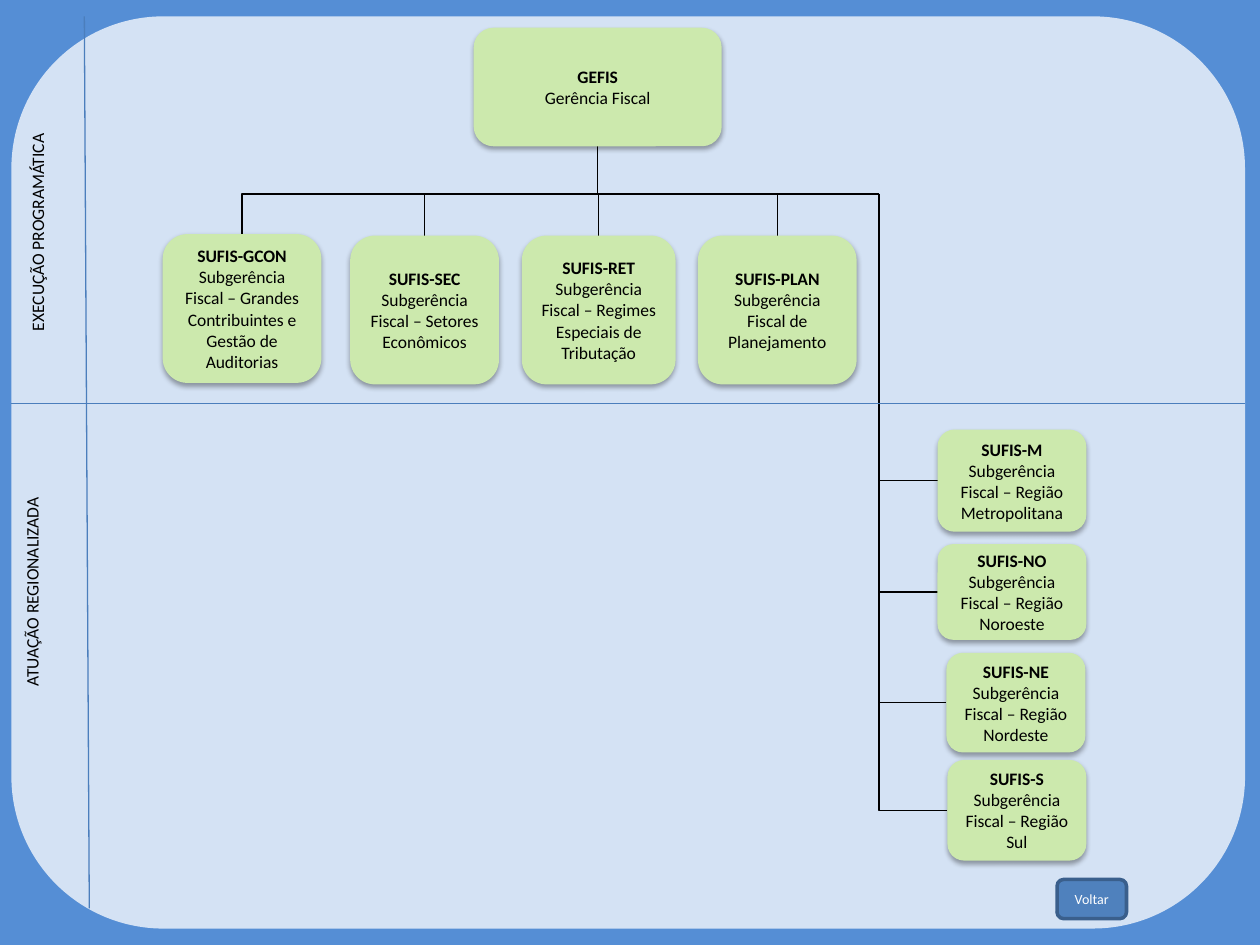
from dataclasses import dataclass

from lxml.etree import SubElement
from pptx import Presentation
from pptx.dml.color import RGBColor
from pptx.enum.shapes import MSO_CONNECTOR as Connector, MSO_SHAPE as Preset
from pptx.enum.text import MSO_ANCHOR as Anchor, MSO_AUTO_SIZE as AutoSize, PP_ALIGN as Align
from pptx.oxml.ns import qn
from pptx.util import Cm, Pt

FONT = "Calibri"
BLACK = "000000"
LANE_LINE = "4B7EBC"
BUS_Y = 3.91
TRUNK_X = 17.72


@dataclass(frozen=True)
class Box:
    left: float
    top: float
    width: float
    height: float

    @property
    def center_x(self) -> float:
        return self.left + self.width / 2

    @property
    def center_y(self) -> float:
        return self.top + self.height / 2

    @property
    def lengths(self) -> tuple:
        return Cm(self.left), Cm(self.top), Cm(self.width), Cm(self.height)


@dataclass(frozen=True)
class Unit:
    code: str
    name: str
    box: Box


@dataclass(frozen=True)
class Lane:
    title: str
    box: Box


HEAD = Unit("GEFIS", "Gerência Fiscal", Box(9.55, 0.56, 5, 2.39))
GCON = Unit(
    "SUFIS-GCON",
    "Subgerência Fiscal – Grandes Contribuintes e Gestão de Auditorias",
    Box(3.28, 4.72, 3.2, 3),
)
PROGRAMS = [
    Unit("SUFIS-SEC", "Subgerência Fiscal – Setores Econômicos", Box(7.06, 4.75, 3, 3)),
    Unit("SUFIS-RET", "Subgerência Fiscal – Regimes Especiais de Tributação",
         Box(10.52, 4.75, 3.1, 3)),
    Unit("SUFIS-PLAN", "Subgerência Fiscal de Planejamento", Box(14.07, 4.75, 3.2, 3)),
]
REGIONS = [
    Unit("SUFIS-M", "Subgerência Fiscal – Região Metropolitana", Box(18.9, 8.66, 3, 2.06)),
    Unit("SUFIS-NO", "Subgerência Fiscal – Região Noroeste", Box(18.9, 10.97, 3, 1.93)),
    Unit("SUFIS-NE", "Subgerência Fiscal – Região Nordeste", Box(19.08, 13.16, 2.8, 2.01)),
    Unit("SUFIS-S", "Subgerência Fiscal – Região Sul", Box(19.1, 15.32, 2.8, 2.03)),
]
LANES = [
    Lane("EXECUÇÃO PROGRAMÁTICA", Box(0.41, 2.41, 0.94, 4.55)),
    Lane("ATUAÇÃO REGIONALIZADA", Box(0.3, 6.55, 0.94, 10.77)),
]


def paint(color_format, color: str) -> None:
    color_format.rgb = RGBColor.from_string(color)


def fill_solid(fill, color: str) -> None:
    fill.solid()
    paint(fill.fore_color, color)


def add_run(paragraph, text: str, size: float = 10, color: str = BLACK, bold: bool = False) -> None:
    paragraph.alignment = Align.CENTER
    run = paragraph.add_run()
    run.text = text
    run.font.name = FONT
    run.font.size = Pt(size)
    run.font.bold = bold
    paint(run.font.color, color)


def add_rounded(slide, box: Box, color: str):
    shape = slide.shapes.add_shape(Preset.ROUNDED_RECTANGLE, *box.lengths)
    shape.shadow.inherit = False
    fill_solid(shape.fill, color)
    shape.line.fill.background()
    shape.text_frame.word_wrap = True
    shape.text_frame.vertical_anchor = Anchor.MIDDLE
    return shape


def add_shadow(shape) -> None:
    effects = shape._element.spPr.find(qn("a:effectLst"))
    shadow = SubElement(effects, qn("a:outerShdw"), blurRad=str(Pt(3.1)), dist=str(Pt(1.8)),
                        dir="5400000", rotWithShape="0")
    color = SubElement(shadow, qn("a:srgbClr"), val=BLACK)
    SubElement(color, qn("a:alpha"), val="35000")


def add_unit(slide, unit: Unit) -> None:
    shape = add_rounded(slide, unit.box, "CCE9AD")
    add_shadow(shape)
    frame = shape.text_frame
    add_run(frame.paragraphs[0], unit.code, bold=True)
    add_run(frame.add_paragraph(), unit.name)


def add_line(slide, start: tuple, end: tuple, color: str = BLACK, kind=Connector.STRAIGHT):
    line = slide.shapes.add_connector(kind, *(Cm(value) for value in (*start, *end)))
    line.line.width = Pt(0.75)
    paint(line.line.color, color)
    SubElement(line._element.spPr, qn("a:effectLst"))
    return line


def add_elbow(slide, start: tuple, end: tuple, bend_y: float | None = None) -> None:
    across, down = end[0] - start[0], end[1] - start[1]
    left = (start[0] + end[0] - abs(down)) / 2
    top = (start[1] + end[1] - abs(across)) / 2
    elbow = add_line(slide, (left, top), (left + abs(down), top + abs(across)),
                     kind=Connector.ELBOW)
    properties = elbow._element.spPr
    transform = properties.find(qn("a:xfrm"))
    transform.set("rot", str((90 if across < 0 else 270) * 60000))
    if across > 0 and down > 0:
        transform.set("flipH", "1")
    geometry = properties.find(qn("a:prstGeom"))
    if bend_y is None:
        geometry.set("prst", "bentConnector2")
    else:
        ratio = round((bend_y - start[1]) / down * 100000)
        SubElement(geometry.find(qn("a:avLst")), qn("a:gd"), name="adj1", fmla=f"val {ratio}")


def add_lane_title(slide, lane: Lane) -> None:
    frame = slide.shapes.add_textbox(*lane.box.lengths).text_frame
    frame.word_wrap = True
    frame.auto_size = AutoSize.SHAPE_TO_FIT_TEXT
    frame._txBody.bodyPr.set("vert", "vert270")
    add_run(frame.paragraphs[0], lane.title)


def add_button(slide) -> None:
    button = add_rounded(slide, Box(21.31, 17.73, 1.4, 0.79), "4F81BD")
    button.line.width = Pt(2)
    paint(button.line.color, "3A5F8C")
    add_run(button.text_frame.paragraphs[0], "Voltar", size=8, color="FFFFFF")


def main() -> None:
    presentation = Presentation()
    presentation.slide_width, presentation.slide_height = Cm(25.4), Cm(19.05)
    slide = presentation.slides.add_slide(presentation.slide_layouts[6])
    fill_solid(slide.background.fill, "558ED5")
    add_rounded(slide, Box(0.23, 0.33, 24.87, 18.39), "D4E2F4")

    head_bottom = (HEAD.box.center_x, HEAD.box.top + HEAD.box.height)
    for unit in PROGRAMS:
        add_elbow(slide, head_bottom, (unit.box.center_x, unit.box.top), BUS_Y)
    add_elbow(slide, (GCON.box.center_x, GCON.box.top), (PROGRAMS[0].box.center_x, BUS_Y))
    add_line(slide, (HEAD.box.center_x, BUS_Y), (TRUNK_X, BUS_Y))
    for unit in REGIONS:
        add_elbow(slide, (TRUNK_X, BUS_Y), (unit.box.left, unit.box.center_y))

    add_line(slide, (0.23, 8.13), (25.1, 8.13), LANE_LINE)
    add_line(slide, (1.7, 0.33), (1.8, 18.31), LANE_LINE)
    for unit in [HEAD, GCON, *PROGRAMS, *REGIONS]:
        add_unit(slide, unit)
    for lane in LANES:
        add_lane_title(slide, lane)
    add_button(slide)
    presentation.save("out.pptx")


if __name__ == "__main__":
    main()
